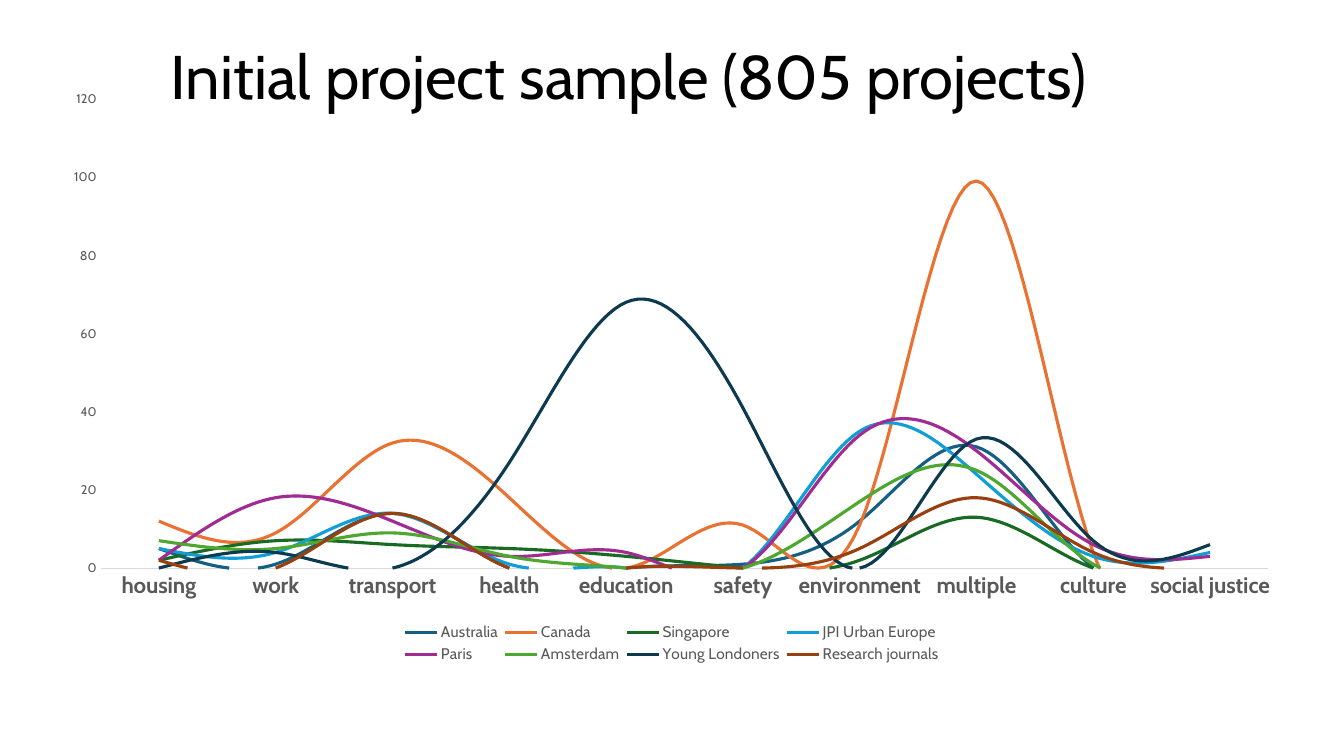
import dataclasses

import pptx
import pptx.chart.data
import pptx.dml.color
import pptx.enum.chart
import pptx.enum.text
import pptx.oxml
import pptx.oxml.ns
import pptx.util

WIDE, HIGH = 13.33, 7.5
FONT = "Cabin"
HUES = {
    "black": "000000", "grey": "595959", "rule": "D9D9D9",
    "blue": "156082", "orange": "E97132", "green": "196B24", "sky": "0F9ED5",
    "purple": "A02B93", "lime": "4EA72E", "navy": "0D3A4E", "brown": "994010",
}


@dataclasses.dataclass
class Box:
    """Left, top, width and height as shares of the space around it."""
    left: float
    top: float
    width: float
    height: float


@dataclasses.dataclass
class Curve:
    name: str
    hue: str
    counts: tuple[int, ...]


TITLE = Box(0.0368, 0.008, 0.8627, 0.1933)
CHART = Box(0.0368, 0.1053, 0.9265, 0.7787)
PLOT = Box(0.041, 0.033, 0.938, 0.797)
LEGEND = Box(0.28, 0.918, 0.44, 0.08)

TOPICS = ("housing", "work", "transport", "health", "education", "safety",
          "environment", "multiple", "culture", "social justice")
CURVES = (
    Curve("Australia", "blue", (5, 1, 14, 0, 0, 1, 12, 31, 0, 0)),
    Curve("Canada", "orange", (12, 9, 32, 18, 0, 11, 11, 99, 4, 0)),
    Curve("Singapore", "green", (2, 7, 6, 5, 3, 0, 2, 13, 0, 0)),
    Curve("JPI Urban Europe", "sky", (5, 4, 14, 1, 0, 0, 35, 24, 3, 4)),
    Curve("Paris", "purple", (2, 18, 12, 3, 4, 0, 34, 30, 6, 3)),
    Curve("Amsterdam", "lime", (7, 5, 9, 3, 0, 0, 17, 25, 1, 0)),
    Curve("Young Londoners", "navy", (0, 4, 0, 27, 68, 41, 0, 33, 7, 6)),
    Curve("Research journals", "brown", (2, 0, 14, 0, 0, 0, 5, 18, 4, 0)),
)


def tint(hue: str) -> pptx.dml.color.RGBColor:
    return pptx.dml.color.RGBColor.from_string(HUES[hue])


def place(box: Box) -> tuple:
    return (pptx.util.Inches(box.left * WIDE), pptx.util.Inches(box.top * HIGH),
            pptx.util.Inches(box.width * WIDE), pptx.util.Inches(box.height * HIGH))


def style(font, size: float, hue: str, bold: bool = False) -> None:
    font.name = FONT
    font.size = pptx.util.Pt(size)
    font.bold = bold
    font.color.rgb = tint(hue)


def lay_out(part, box: Box, spot: int, inner: bool = False) -> None:
    """Fix where a chart part sits, in shares of the chart."""
    for old in part.findall(pptx.oxml.ns.qn("c:layout")):
        part.remove(old)
    marks = [("layoutTarget", "inner")] if inner else []
    marks += [("xMode", "edge"), ("yMode", "edge"), ("x", box.left),
              ("y", box.top), ("w", box.width), ("h", box.height)]
    body = "".join(f'<c:{tag} val="{value}"/>' for tag, value in marks)
    part.insert(spot, pptx.oxml.parse_xml(
        f'<c:layout {pptx.oxml.ns.nsdecls("c")}>'
        f'<c:manualLayout>{body}</c:manualLayout></c:layout>'))


def add_title(slide) -> None:
    title = slide.shapes.title
    title.left, title.top, title.width, title.height = place(TITLE)
    frame = title.text_frame
    frame.word_wrap = True
    frame.vertical_anchor = pptx.enum.text.MSO_ANCHOR.MIDDLE
    line = frame.paragraphs[0]
    line.alignment = pptx.enum.text.PP_ALIGN.CENTER
    line.line_spacing = 0.9
    run = line.add_run()
    run.text = "Initial project sample (805 projects)"
    style(run.font, 44, "black")


def add_curves(slide) -> None:
    data = pptx.chart.data.CategoryChartData()
    data.categories = TOPICS
    for curve in CURVES:
        data.add_series(curve.name, curve.counts)
    chart = slide.shapes.add_chart(
        pptx.enum.chart.XL_CHART_TYPE.LINE, *place(CHART), data).chart
    chart.has_title = False
    style(chart.font, 10, "black")

    # Smooth lines
    plot = chart.plots[0]
    plot.vary_by_categories = False
    for series, curve in zip(plot.series, CURVES):
        series.smooth = True
        series.marker.style = pptx.enum.chart.XL_MARKER_STYLE.NONE
        series.format.line.width = pptx.util.Pt(2.25)
        series.format.line.color.rgb = tint(curve.hue)

    # Axes
    none = pptx.enum.chart.XL_TICK_MARK.NONE
    topics, counts = chart.category_axis, chart.value_axis
    for axis, size, bold in ((topics, 16, True), (counts, 9, False)):
        axis.major_tick_mark = axis.minor_tick_mark = none
        axis.has_major_gridlines = False
        style(axis.tick_labels.font, size, "grey", bold)
    topics.format.line.color.rgb = tint("rule")
    topics.format.line.width = pptx.util.Pt(0.75)
    counts.format.line.fill.background()
    counts.minimum_scale, counts.maximum_scale = 0, 120
    counts.major_unit = 20

    # Legend and placing
    chart.has_legend = True
    legend = chart.legend
    legend.position = pptx.enum.chart.XL_LEGEND_POSITION.BOTTOM
    legend.include_in_layout = False
    style(legend.font, 11, "grey")
    root = chart.element
    lay_out(root.find(".//" + pptx.oxml.ns.qn("c:plotArea")), PLOT, 0, True)
    lay_out(root.find(".//" + pptx.oxml.ns.qn("c:legend")), LEGEND, 1)


def main() -> None:
    deck = pptx.Presentation()
    deck.slide_width = pptx.util.Inches(WIDE)
    deck.slide_height = pptx.util.Inches(HIGH)
    slide = deck.slides.add_slide(deck.slide_layouts[5])
    add_title(slide)
    add_curves(slide)
    deck.save("out.pptx")


if __name__ == "__main__":
    main()
